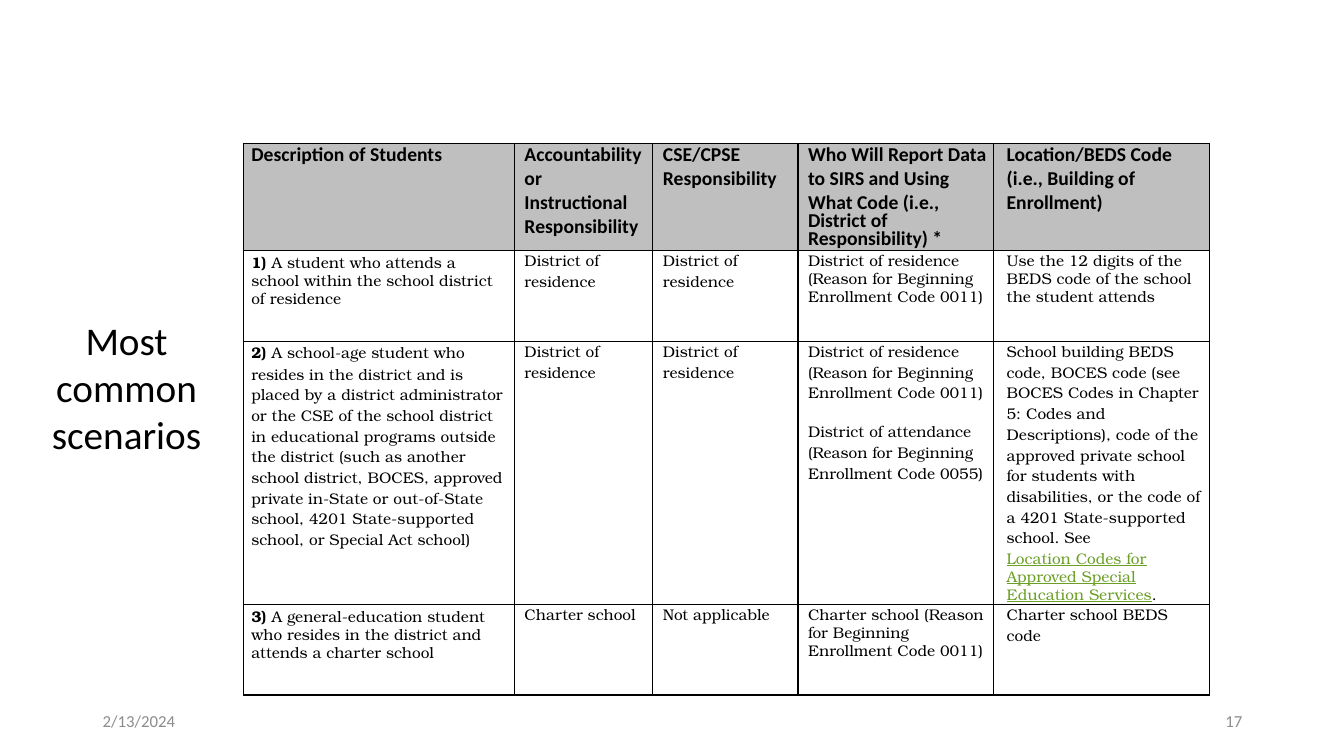
from lxml import etree
from pptx import Presentation, util as u
from pptx.dml.color import RGBColor
from pptx.enum import text
from pptx.oxml.ns import qn

COLORS = {"ink": "000000", "muted": "8C8C8C", "header": "BFBFBF", "link": "6B9F25"}
LEFT, CENTER, RIGHT = text.PP_ALIGN.LEFT, text.PP_ALIGN.CENTER, text.PP_ALIGN.RIGHT
BOLD = {"bold": True}
LINK = {"underline": True, "color": "link"}
TIGHT = {"line_spacing": u.Pt(12.8)}
NEXT_GROUP = {"space_before": u.Pt(13)}

HOME = ["District of residence"]
HEADINGS = [
    ["Description of Students"],
    ["Accountability or Instructional Responsibility"],
    ["CSE/CPSE", "Responsibility"],
    ["Who Will Report Data to SIRS and Using What Code (i.e.,",
     (TIGHT, "District of Responsibility) *")],
    ["Location/BEDS Code (i.e., Building of Enrollment)"],
]
# A paragraph is a string, or (format, span, ...); a span is a string or (format, string).
SCENARIOS = [
    [
        [({}, (BOLD, "1) "), "A student who attends a"),
         (TIGHT, "school within the school district of residence")],
        HOME,
        HOME,
        ["District of residence",
         (TIGHT, "(Reason for Beginning Enrollment Code 0011)")],
        ["Use the 12 digits of the",
         (TIGHT, "BEDS code of the school the student attends")],
    ],
    [
        [({}, (BOLD, "2) "),
          "A school-age student who resides in the district and is placed by a district "
          "administrator or the CSE of the school district in educational programs outside "
          "the district (such as another school district, BOCES, approved private in-State "
          "or out-of-State school, 4201 State-supported school, or Special Act school)")],
        HOME,
        HOME,
        ["District of residence (Reason for Beginning Enrollment Code 0011)",
         (NEXT_GROUP, "District of attendance (Reason for Beginning Enrollment Code 0055)")],
        ["School building BEDS code, BOCES code (see BOCES Codes in Chapter 5: Codes and "
         "Descriptions), code of the approved private school for students with "
         "disabilities, or the code of a 4201 State-supported school. See",
         ({}, (LINK, "Location Codes for")),
         (TIGHT, (LINK, "Approved Special Education Services"), ".")],
    ],
    [
        [({}, (BOLD, "3) "), "A general-education student"),
         (TIGHT, "who resides in the district and attends a charter school")],
        ["Charter school"],
        ["Not applicable"],
        ["Charter school (Reason",
         (TIGHT, "for Beginning Enrollment Code 0011)")],
        ["Charter school BEDS code"],
    ],
]


class SlideWriter:
    """Places elements on one slide; lengths are percentages of its size."""

    heading = {"name": "Calibri", "size": u.Pt(14), "bold": True, "color": "ink"}
    body = {"name": "TeX Gyre Bonum", "size": u.Pt(11), "bold": False, "color": "ink"}
    title = {"name": "Calibri", "size": u.Pt(28), "color": "ink"}
    footer = {"name": "Calibri", "size": u.Pt(12), "color": "muted"}

    def __init__(self, deck):
        self.deck = deck
        self.page = deck.slides.add_slide(deck.slide_layouts[6])

    def across(self, share):
        return round(self.deck.slide_width * share / 100)

    def down(self, share):
        return round(self.deck.slide_height * share / 100)

    def area(self, left, top, width, height):
        return self.across(left), self.down(top), self.across(width), self.down(height)

    def span(self, para, words, style):
        span = para.add_run()
        span.text = words
        for name, value in style.items():
            if name == "color":
                span.font.color.rgb = RGBColor.from_string(COLORS[value])
            else:
                setattr(span.font, name, value)

    def label(self, words, area, style, align=LEFT, anchor=text.MSO_ANCHOR.MIDDLE):
        frame = self.page.shapes.add_textbox(*self.area(*area)).text_frame
        frame.word_wrap = True
        frame.vertical_anchor = anchor
        para = frame.paragraphs[0]
        para.alignment = align
        self.span(para, words, style)

    def border(self, cell):
        for side in ("lnL", "lnR", "lnT", "lnB"):
            line = etree.SubElement(cell._tc.get_or_add_tcPr(), qn(f"a:{side}"), w=str(u.Pt(1)))
            fill = etree.SubElement(line, qn("a:solidFill"))
            etree.SubElement(fill, qn("a:srgbClr"), val=COLORS["ink"])

    def cell(self, cell, paragraphs, style, insets, fill=None):
        before, after = (self.across(inset) for inset in insets)
        margins = {"left": before, "right": after, "top": 0, "bottom": 0}
        for side, margin in margins.items():
            setattr(cell, f"margin_{side}", margin)
        self.border(cell)
        if fill:
            cell.fill.solid()
            cell.fill.fore_color.rgb = RGBColor.from_string(COLORS[fill])
        else:
            cell.fill.background()
        frame = cell.text_frame
        for number, content in enumerate(paragraphs):
            para = frame.add_paragraph() if number else frame.paragraphs[0]
            layout, *spans = ({}, content) if isinstance(content, str) else content
            for name, value in layout.items():
                setattr(para, name, value)
            for item in spans:
                extra, words = ({}, item) if isinstance(item, str) else item
                self.span(para, words, {**style, **extra})

    def table(self, rows, corner, widths, heights, insets):
        area = self.area(*corner, sum(widths), sum(heights))
        table = self.page.shapes.add_table(len(rows), len(widths), *area).table
        table.first_row = table.horz_banding = False
        for column, width in zip(table.columns, widths):
            column.width = self.across(width)
        for index, (row, height, contents) in enumerate(zip(table.rows, heights, rows)):
            row.height = self.down(height)
            style, fill = (self.body, None) if index else (self.heading, "header")
            for cell, paragraphs, inset in zip(row.cells, contents, insets):
                self.cell(cell, paragraphs, style, inset, fill)


def main():
    deck = Presentation()
    deck.slide_width, deck.slide_height = u.Inches(13.33), u.Inches(7.5)
    writer = SlideWriter(deck)
    writer.label("2/13/2024", (6.9, 92.67, 22.5, 5.33), writer.footer)
    writer.label("17", (70.67, 92.67, 22.5, 5.33), writer.footer, RIGHT)
    writer.table([HEADINGS, *SCENARIOS], (18.1, 18.93),
                 widths=(20.18, 10.3, 10.8, 14.55, 16.05), heights=(14.2, 12, 34.8, 12),
                 insets=((0.6, 0.6), (0.75, 0.6), (0.75, 0), (0.75, 0), (0.98, 0.38)))
    writer.label("Most common scenarios", (1.95, 41.2, 14.93, 20.13), writer.title,
                 CENTER, text.MSO_ANCHOR.TOP)
    deck.save("out.pptx")


if __name__ == "__main__":
    main()
